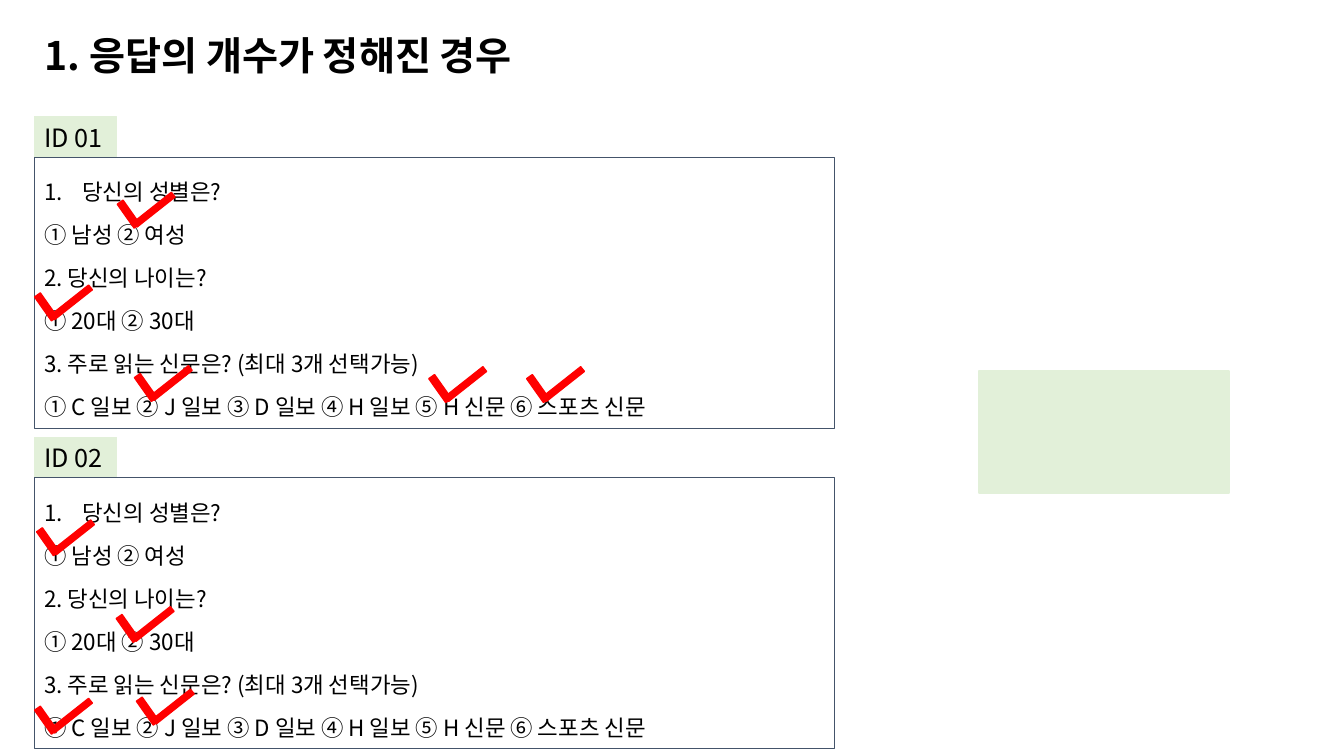
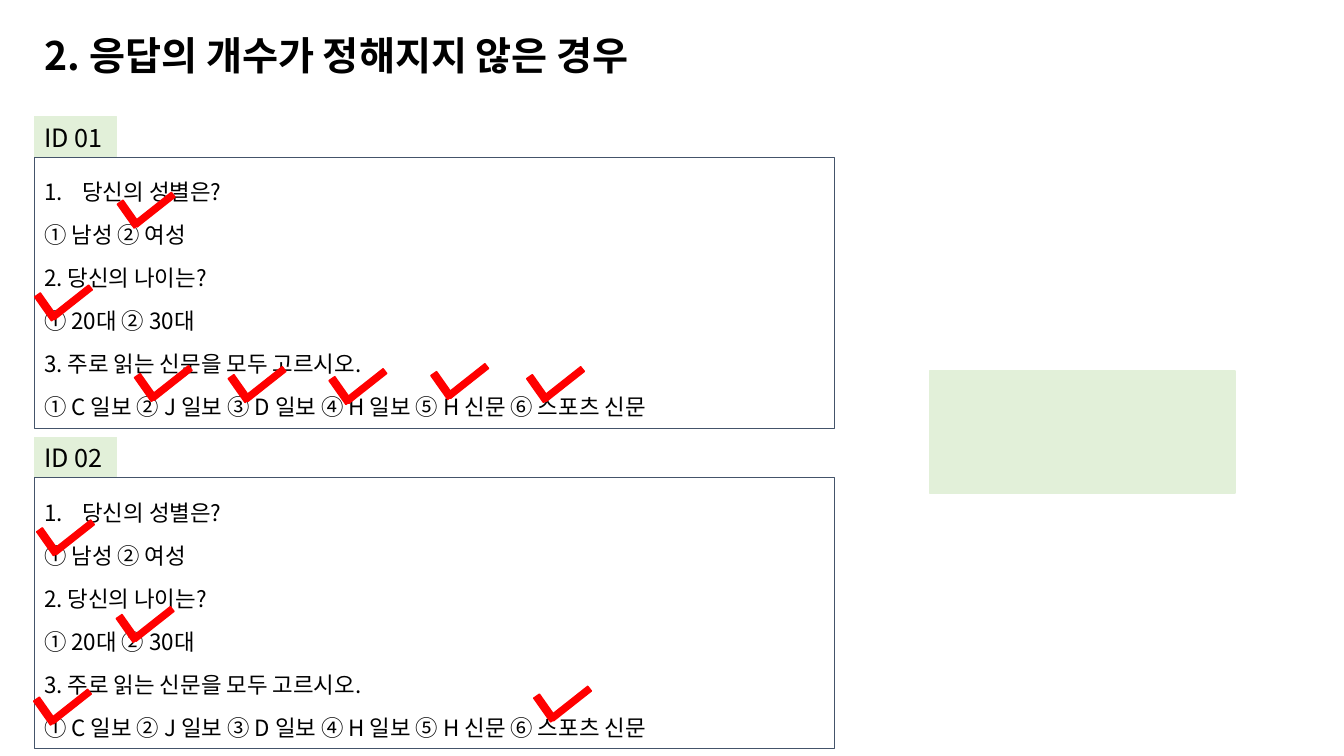
from lxml import etree
from pptx import Presentation
from pptx.dml.color import RGBColor
from pptx.enum.shapes import MSO_SHAPE as Shape
from pptx.enum.text import MSO_ANCHOR as Anchor, MSO_AUTO_SIZE as Fit, PP_ALIGN as Align
from pptx.oxml.ns import qn
from pptx.util import Pt

SCALE = 9144  # EMU in one px, 100 px to the inch
FONT = "Noto Sans CJK KR"
BLACK = RGBColor(0, 0, 0)
GREEN = RGBColor(0xE2, 0xF0, 0xD9)
SLATE = RGBColor(0x44, 0x54, 0x6A)
RED = RGBColor(0xFF, 0, 0)

LEFT = 34
TOP, STEP = 116, 318
TAG_W, TAG_H = 82, 40
CARD_W, CARD_H = 794, 269
INDENT = 38

PAPERS = "① C 일보 ② J 일보 ③ D 일보 ④ H 일보 ⑤ H 신문 ⑥ 스포츠 신문"
# Left and top of the long stroke of each tick
TICKS = [(129, 205), (47, 297), (146, 377), (535, 378), (49, 530), (128, 616)]

PAGES = [
    {
        "title": "1. 응답의 개수가 정해진 경우",
        "width": 541,
        "ask": "3. 주로 읽는 신문은? (최대 3개 선택가능)",
        "ticks": [(438, 378), (47, 707), (148, 698)],
        "panel": (971, 368, 248, 121),
    },
    {
        "title": "2. 응답의 개수가 정해지지 않은 경우",
        "width": 672,
        "ask": "3. 주로 읽는 신문을 모두 고르시오.",
        "ticks": [(239, 378), (339, 380), (440, 375), (46, 698), (542, 695)],
        "panel": (922, 368, 303, 121),
    },
]


def px(*sizes):
    return [size * SCALE for size in sizes]


def add_run(para, text, size, bold=False):
    run = para.add_run()
    run.text = text
    font = run.font
    font.name, font.size, font.bold = FONT, Pt(size), bold
    font.color.rgb = BLACK
    etree.SubElement(run._r.get_or_add_rPr(), qn("a:ea"), typeface=FONT)


def set_frame(frame, wrap):
    frame.word_wrap = wrap
    frame.auto_size = Fit.SHAPE_TO_FIT_TEXT
    frame.vertical_anchor = Anchor.TOP
    frame.paragraphs[0].alignment = Align.LEFT


def number(para):
    """Give the paragraph an automatic number with a hanging indent."""
    props = para._p.get_or_add_pPr()
    props.set("marL", str(INDENT * SCALE))
    props.set("indent", str(-INDENT * SCALE))
    etree.SubElement(props, qn("a:buFont"), typeface=FONT)
    etree.SubElement(props, qn("a:buAutoNum"), type="arabicPeriod")


def add_rect(shapes, box, fill, line, width=0.75):
    rect = shapes.add_shape(Shape.RECTANGLE, *px(*box))
    rect.shadow.inherit = False
    if fill is None:
        rect.fill.background()
    else:
        rect.fill.solid()
        rect.fill.fore_color.rgb = fill
    rect.line.color.rgb = line
    rect.line.width = Pt(width)
    return rect


def add_title(slide, text, width):
    title = slide.shapes.title
    title.left, title.top, title.width, title.height = px(LEFT, 26, width, 57)
    set_frame(title.text_frame, False)
    add_run(title.text_frame.paragraphs[0], text, 28, True)


def add_card(slide, top, name, lines):
    """Draw one answer sheet: a name tag above a framed list of questions."""
    tag = add_rect(slide.shapes, (LEFT, top, TAG_W, TAG_H), GREEN, GREEN)
    set_frame(tag.text_frame, False)
    add_run(tag.text_frame.paragraphs[0], name, 18)

    card = add_rect(slide.shapes, (LEFT, top + TAG_H, CARD_W, CARD_H), None, SLATE)
    frame = card.text_frame
    set_frame(frame, True)
    for i, text in enumerate(lines):
        para = frame.add_paragraph() if i else frame.paragraphs[0]
        para.alignment = Align.JUSTIFY
        para.line_spacing = 1.6
        if i == 0:
            number(para)
        add_run(para, text, 16)


def add_tick(slide, left, top):
    group = slide.shapes.add_group_shape()
    strokes = [
        ((left, top, 48, 6), 321.7),
        ((left - 16, top + 4, 29, 7), 54.8),
    ]
    for box, angle in strokes:
        add_rect(group.shapes, box, RED, RED, 1).rotation = angle


def add_page(deck, page):
    slide = deck.slides.add_slide(deck.slide_layouts[5])
    add_title(slide, page["title"], page["width"])
    lines = ["당신의 성별은?", "① 남성 ② 여성", "2. 당신의 나이는?",
             "① 20대 ② 30대", page["ask"], PAPERS]
    for i, name in enumerate(("ID 01", "ID 02")):
        add_card(slide, TOP + i * STEP, name, lines)
    for left, top in TICKS + page["ticks"]:
        add_tick(slide, left, top)
    add_rect(slide.shapes, page["panel"], GREEN, GREEN, 1)


def main():
    deck = Presentation()
    deck.slide_width, deck.slide_height = px(1333, 750)
    for page in PAGES:
        add_page(deck, page)
    deck.save("out.pptx")


if __name__ == "__main__":
    main()
